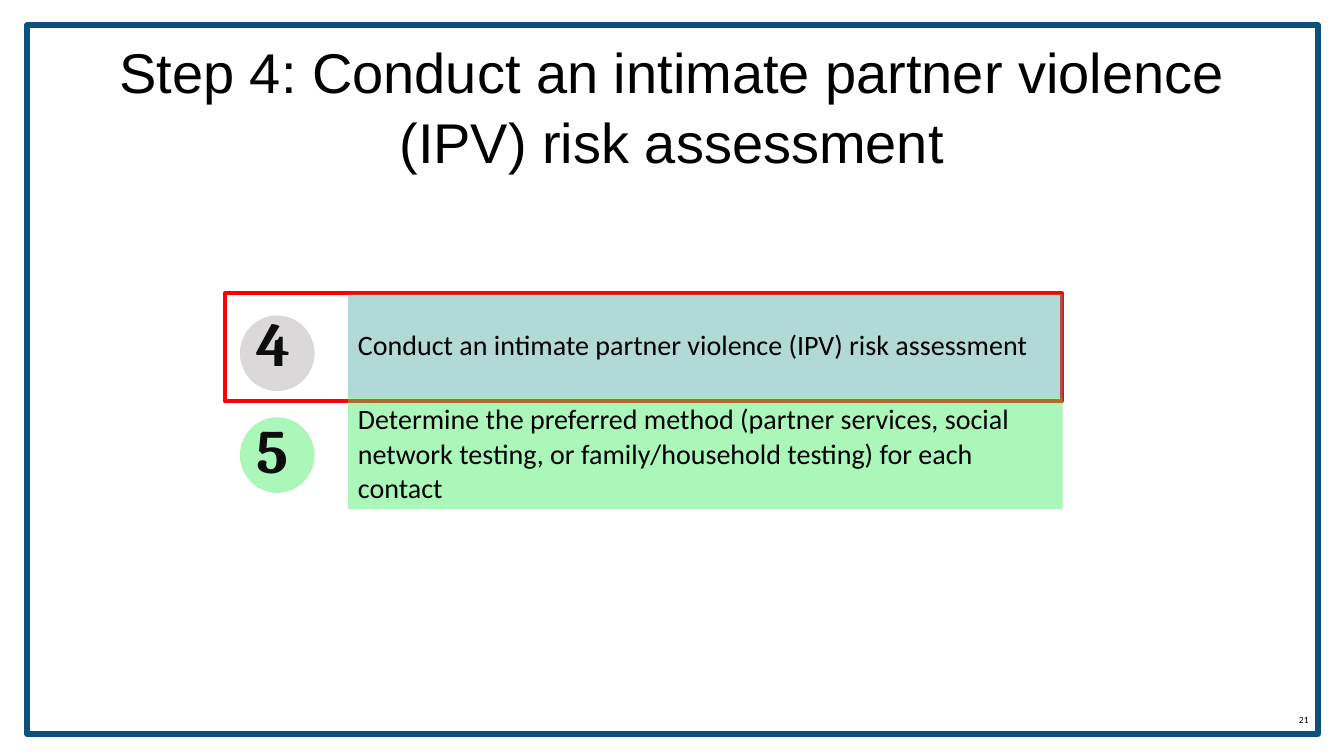
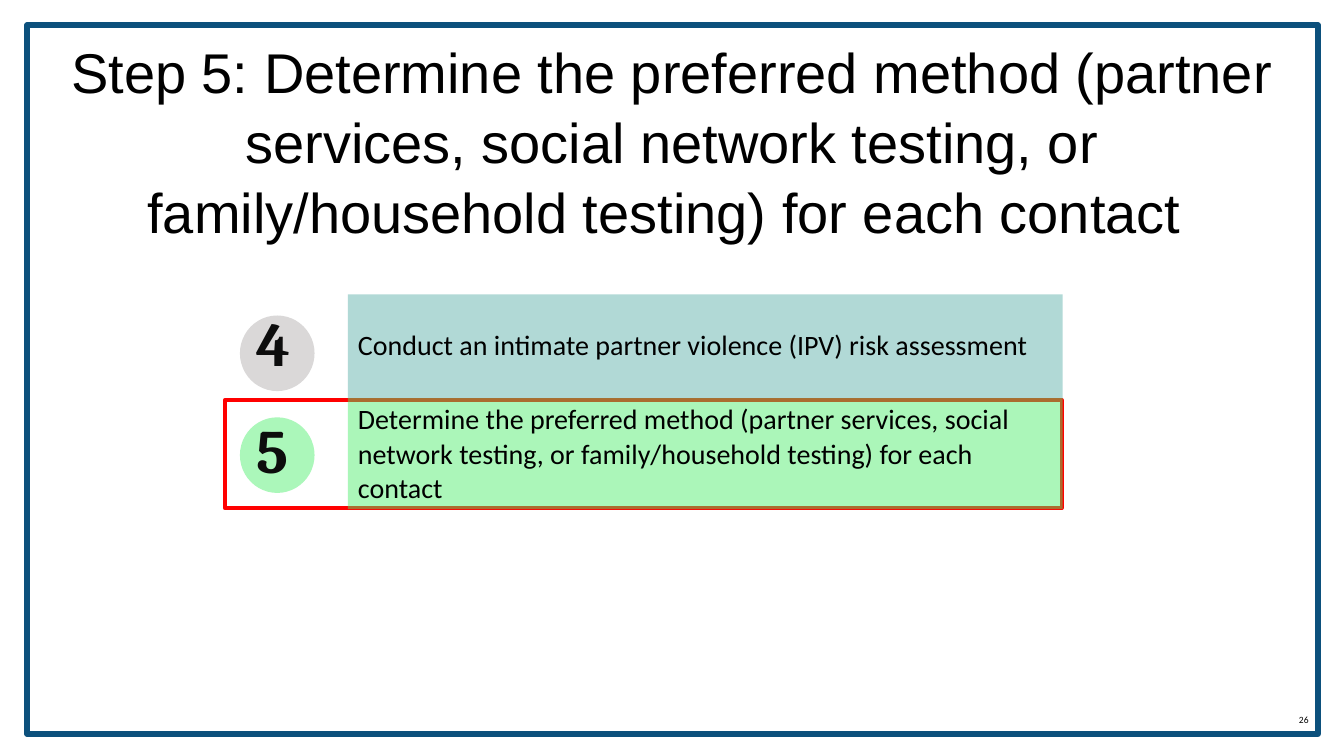
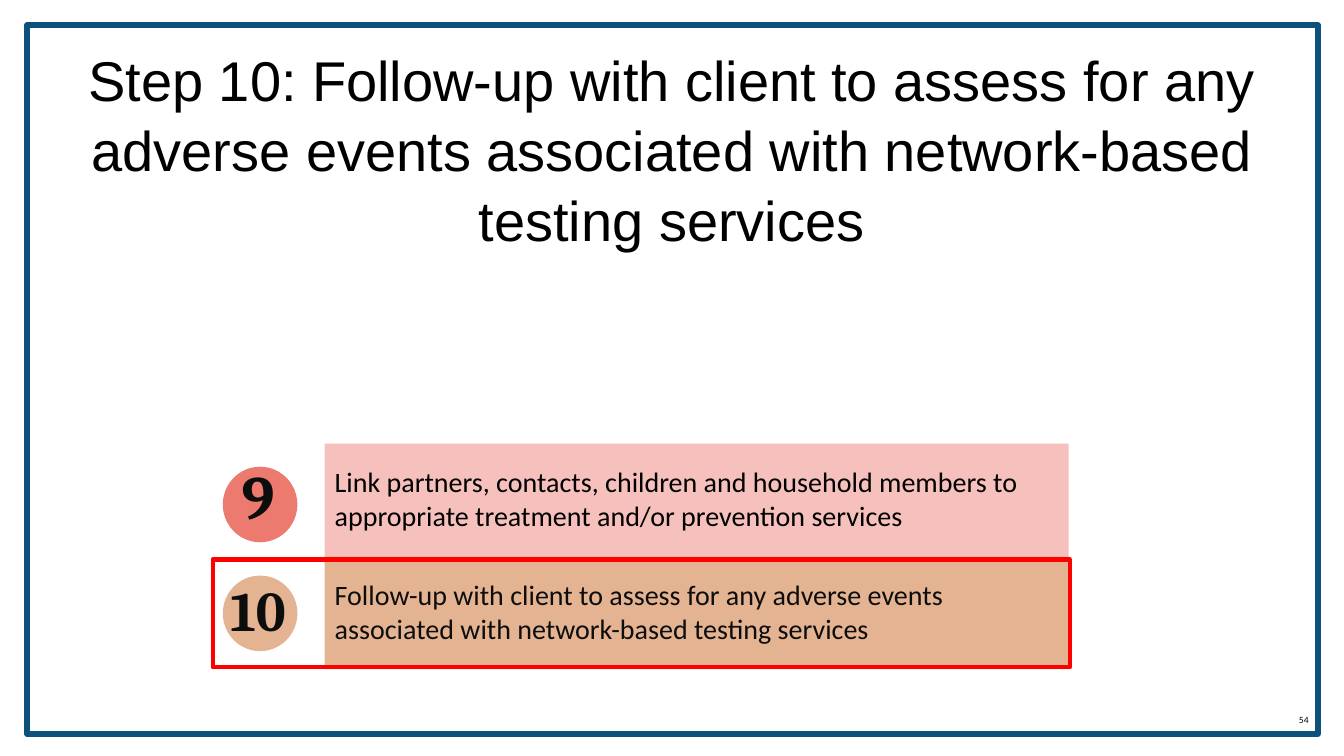
"""Build three step slides, each with a framed title and a highlighted step table."""
from lxml import etree
from pptx import Presentation
from pptx.dml.color import RGBColor
from pptx.enum import shapes, text
from pptx.oxml import ns
from pptx.util import Inches, Pt

WHITE = RGBColor(0xFF, 0xFF, 0xFF)
BLACK = RGBColor(0x00, 0x00, 0x00)
INK = RGBColor(0x0D, 0x0D, 0x0D)
NAVY = RGBColor(0x0C, 0x50, 0x7C)
RED = RGBColor(0xFF, 0x00, 0x00)
TEAL = RGBColor(0x56, 0xAE, 0xA6)
GREEN = RGBColor(0x49, 0xED, 0x68)
CORAL = RGBColor(0xEC, 0x7A, 0x6E)
RUST = RGBColor(0xC5, 0x5A, 0x11)
GREY = RGBColor(0xDA, 0xD8, 0xD8)
MINT = RGBColor(0xAB, 0xF7, 0xBA)
TAN = RGBColor(0xE4, 0xB3, 0x92)

LEFT, CENTER, RIGHT = text.PP_ALIGN.LEFT, text.PP_ALIGN.CENTER, text.PP_ALIGN.RIGHT
CELL_OPACITY = 46
PLAIN_TABLE_STYLE = "{2D5ABB26-0587-4C30-8999-92F81FD0307C}"

STEP_4 = ("4", 44, "Conduct an intimate partner violence (IPV) risk assessment",
          TEAL, GREY, BLACK)
STEP_5 = ("5", 44, "Determine the preferred method (partner services, social network "
          "testing, or family/household testing) for each contact", GREEN, MINT, BLACK)
STEP_9 = ("9", 44, "Link partners, contacts, children and household members to "
          "appropriate treatment and/or prevention services", CORAL, CORAL, BLACK)
STEP_10 = ("10", 40, "Follow-up with client to assess for any adverse events associated "
           "with network-based testing services", RUST, TAN, INK)

MIDDLE = {"steps": [STEP_4, STEP_5], "table": (2.44, 2.92), "columns": (1.01, 7.09),
          "row": 1.03, "circles": (2.38, 3.13, 1.01), "number_align": LEFT,
          "highlight_over": False}
LOWER = {"steps": [STEP_9, STEP_10], "table": (1.9, 4.4), "columns": (1.32, 7.38),
         "row": 1.12, "circles": (2.21, 4.63, 1.08), "number_align": CENTER,
         "highlight_over": True}

SLIDES = [
    {"title": "Step 4: " + STEP_4[2], "title_box": (0.59, 0.35, 12.14, 2.46),
     "number": "21", "highlight": (2.23, 2.91, 8.3, 1.07), "list": MIDDLE},
    {"title": "Step 5: " + STEP_5[2] + " ", "title_box": (0.59, 0.35, 12.14, 2.46),
     "number": "26", "highlight": (2.23, 3.97, 8.3, 1.07), "list": MIDDLE},
    {"title": "Step 10: " + STEP_10[2], "title_box": (0.59, 0.43, 12.14, 3.32),
     "number": "54", "highlight": (2.11, 5.55, 8.5, 1.07), "list": LOWER},
]


def write(frame, content, size, font="Calibri", color=BLACK, bold=False,
          align=LEFT, spacing=None):
    """Put one formatted paragraph in a text frame."""
    frame.word_wrap = True
    paragraph = frame.paragraphs[0]
    paragraph.alignment = align
    paragraph.line_spacing = spacing
    run = paragraph.add_run()
    run.text = content
    run.font.size = Pt(size)
    run.font.name = font
    run.font.bold = bold
    run.font.color.rgb = color


def add_text_box(slide, box, content, margins=(0, 0), anchor=text.MSO_ANCHOR.TOP, **style):
    """Add a text box with horizontal and vertical margins."""
    frame = slide.shapes.add_textbox(*map(Inches, box)).text_frame
    frame.margin_left = frame.margin_right = Inches(margins[0])
    frame.margin_top = frame.margin_bottom = Inches(margins[1])
    frame.vertical_anchor = anchor
    write(frame, content, **style)


def add_shape(slide, kind, box, fill=None, line=None, width=1):
    """Add a preset shape with an optional fill and outline."""
    shape = slide.shapes.add_shape(kind, *map(Inches, box))
    shape.shadow.inherit = False
    if fill is None:
        shape.fill.background()
    else:
        shape.fill.solid()
        shape.fill.fore_color.rgb = fill
    if line is None:
        shape.line.fill.background()
    else:
        shape.line.color.rgb = line
        shape.line.width = Pt(width)


def tint(cell, color):
    """Fill a cell with a partly transparent colour."""
    cell.fill.solid()
    cell.fill.fore_color.rgb = color
    color_element = cell._tc.tcPr.find(".//" + ns.qn("a:srgbClr"))
    alpha = etree.SubElement(color_element, ns.qn("a:alpha"))
    alpha.set("val", str(CELL_OPACITY * 1000))


def add_circles(slide, layout):
    """Draw the disc behind each step number."""
    left, top, pitch = layout["circles"]
    for index, step in reversed(list(enumerate(layout["steps"]))):
        add_shape(slide, shapes.MSO_SHAPE.OVAL, (left, top + index * pitch, 0.74, 0.75),
                  fill=step[4])


def add_steps(slide, layout):
    """Add the table of step numbers and descriptions."""
    steps, columns = layout["steps"], layout["columns"]
    box = (*layout["table"], sum(columns), layout["row"] * len(steps))
    table = slide.shapes.add_table(len(steps), len(columns), *map(Inches, box)).table
    table.first_row = table.horz_banding = False
    table._tbl.tblPr.find(ns.qn("a:tableStyleId")).text = PLAIN_TABLE_STYLE
    for column, width in zip(table.columns, columns):
        column.width = Inches(width)
    for row, (number, size, label, fill, _, color) in zip(table.rows, steps):
        row.height = Inches(layout["row"])
        number_cell, label_cell = row.cells
        number_cell.fill.background()
        tint(label_cell, fill)
        for cell in row.cells:
            cell.vertical_anchor = text.MSO_ANCHOR.MIDDLE
        write(number_cell.text_frame, number, size, font="Cambria", color=INK,
              bold=True, align=layout["number_align"])
        write(label_cell.text_frame, label, 20, color=color)


def add_step_slide(presentation, content):
    """Add one complete slide."""
    slide = presentation.slides.add_slide(presentation.slide_layouts[6])
    slide.background.fill.solid()
    slide.background.fill.fore_color.rgb = WHITE
    rectangle = shapes.MSO_SHAPE.RECTANGLE
    layout = content["list"]
    add_shape(slide, rectangle, (0.27, 0.25, 12.8, 7.03), line=NAVY, width=4.25)
    add_text_box(slide, (12.41, 6.94, 0.64, 0.4), content["number"], margins=(0.07, 0.04),
                 anchor=text.MSO_ANCHOR.MIDDLE, size=6.8, align=RIGHT)
    add_text_box(slide, content["title_box"], content["title"], size=40, font="Arial",
                 align=CENTER, spacing=1.04)
    add_circles(slide, layout)
    if layout["highlight_over"]:
        add_steps(slide, layout)
    add_shape(slide, rectangle, content["highlight"], line=RED, width=3)
    if not layout["highlight_over"]:
        add_steps(slide, layout)


def main():
    """Build and save the presentation."""
    presentation = Presentation()
    presentation.slide_width = Inches(13.33)
    presentation.slide_height = Inches(7.5)
    for content in SLIDES:
        add_step_slide(presentation, content)
    presentation.save("out.pptx")


if __name__ == "__main__":
    main()
